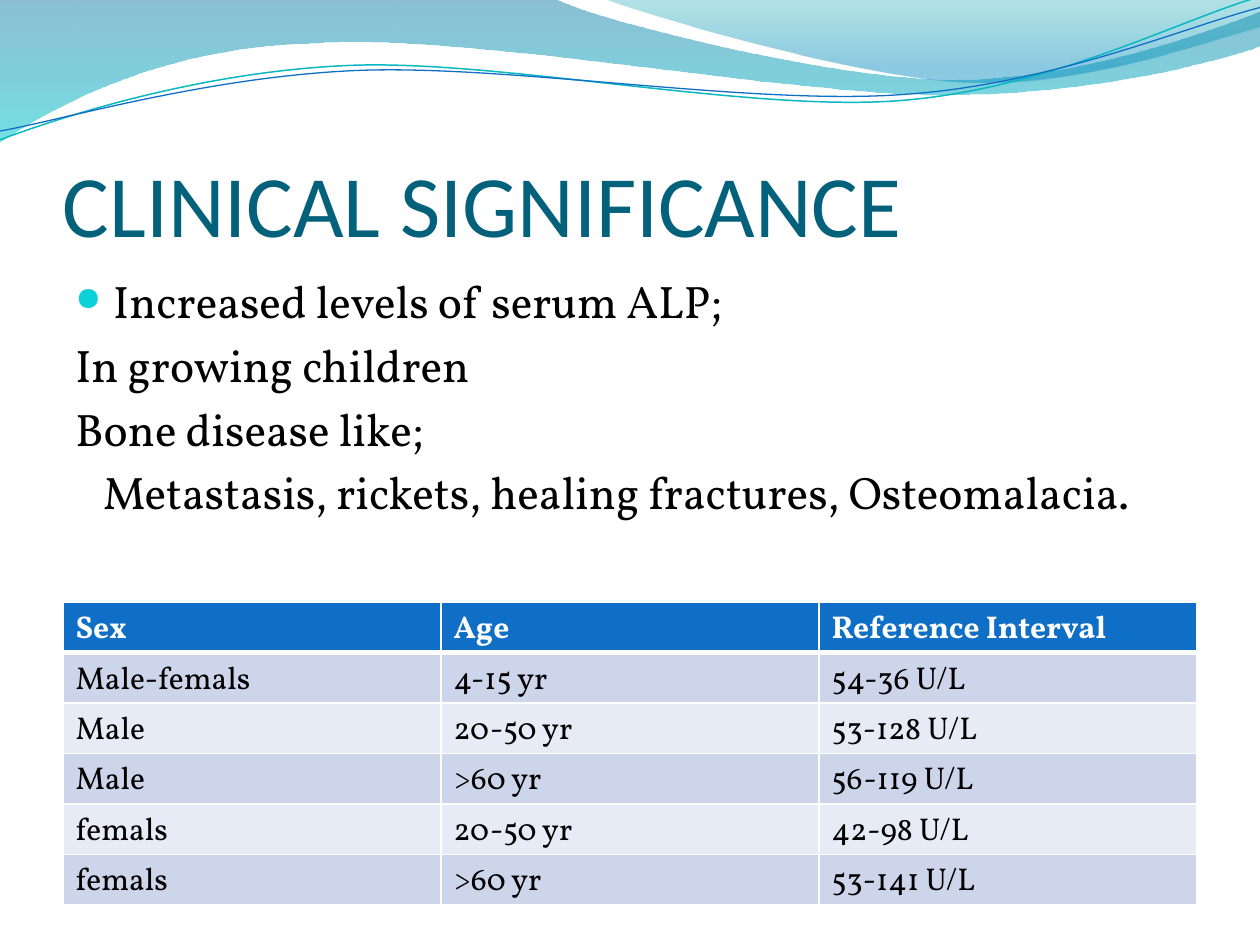
from lxml import etree
from pptx import Presentation
from pptx.dml.color import RGBColor
from pptx.enum.text import MSO_ANCHOR
from pptx.oxml import parse_xml
from pptx.oxml.ns import nsdecls, qn
from pptx.util import Inches, Pt

ANCHOR_BOTTOM = MSO_ANCHOR.BOTTOM
ANCHOR_TOP = MSO_ANCHOR.TOP
TITLE_FONT, BODY_FONT = "Calibri", "Vollkorn"

BLACK = RGBColor(0x00, 0x00, 0x00)
WHITE = RGBColor(0xFF, 0xFF, 0xFF)
TITLE_BLUE = RGBColor(0x04, 0x61, 0x7B)
BULLET_CYAN = RGBColor(0x0B, 0xD0, 0xD9)
LINE_TEAL = RGBColor(0x0A, 0xB8, 0xBF)
BLUE = RGBColor(0x0F, 0x6F, 0xC6)
BAND_DARK = RGBColor(0xCC, 0xD5, 0xEA)
BAND_LIGHT = RGBColor(0xE7, 0xEB, 0xF5)
WAVE_TOP = RGBColor(0x00, 0x74, 0xA1)
WAVE_BOTTOM = RGBColor(0x00, 0xC6, 0xCF)
CREST_TOP = RGBColor(0x00, 0xA1, 0xA9)
CREST_BOTTOM = RGBColor(0x00, 0x8B, 0xBF)

# Each segment is one end point (straight) or two controls and an end point (curve)
WAVE = [(0, 0), (4.4, -0.01), (4.76, 0.17, 6.64, 0.63, 7.58, 0.63),
        (8.53, 0.63, 9.58, 0.26, 10, 0.09), (10.01, 0.36),
        (9.83, 0.44, 8.7, 0.76, 7.46, 0.75), (6.22, 0.75, 3.82, 0.28, 2.57, 0.34),
        (1.29, 0.36, 0.46, 0.83, -0.01, 1.13)]
CREST = [(4.79, -0.01), (5.09, 0.11, 6.82, 0.62, 7.69, 0.65),
         (8.56, 0.69, 9.61, 0.32, 10, 0.21), (10, 0)]
TEAL_CURVE = [(0, 1.11), (0.48, 0.93, 1.58, 0.57, 2.77, 0.52),
              (3.95, 0.47, 5.93, 0.89, 7.13, 0.8), (8.33, 0.71, 9.38, 0.15, 9.98, -0.02)]
BLUE_CURVE = [(0, 1.04), (0.47, 0.96, 1.64, 0.61, 2.83, 0.56),
              (4.03, 0.51, 5.97, 0.84, 7.17, 0.75), (8.36, 0.67, 9.41, 0.21, 10, 0.06)]

# Text, left margin and first-line indent in inches, bullet
BODY_LINES = [
    ("Increased levels of serum ALP;", 0.3, -0.3, True),
    ("In growing children", 0.3, -0.3, False),
    ("Bone disease like;", 0.3, -0.3, False),
    ("Metastasis, rickets, healing fractures, Osteomalacia.", 0.3, -0.08, False),
]
TABLE_ROWS = [
    ("Sex", "Age", "Reference Interval"),
    ("Male-femals", "4-15 yr", "54-36 U/L"),
    ("Male", "20-50 yr", "53-128 U/L"),
    ("Male", ">60 yr", "56-119 U/L"),
    ("femals", "20-50 yr", "42-98 U/L"),
    ("femals", ">60 yr", "53-141 U/L"),
]


def add_outline(slide, segments, close):
    """Build the outline through the end points, then bend its curved segments."""
    ends = [(Inches(segment[-2]), Inches(segment[-1])) for segment in segments]
    builder = slide.shapes.build_freeform(*ends[0])
    builder.add_line_segments(ends[1:], close=close)
    shape = builder.convert_to_shape()
    shape.shadow.inherit = False
    lines = list(shape._element.iter(qn("a:lnTo")))
    for line, segment in zip(lines, segments[1:]):
        if len(segment) == 2:
            continue
        line.tag = qn("a:cubicBezTo")
        for index in (0, 1):
            x, y = segment[2 * index:2 * index + 2]
            point = etree.Element(qn("a:pt"), x=str(Inches(x) - shape.left),
                                  y=str(Inches(y) - shape.top))
            line.insert(index, point)
    return shape


def add_wave(slide, segments, stops):
    """Add a closed shape with a vertical gradient of (position, colour, opacity)."""
    shape = add_outline(slide, segments, True)
    shape.line.fill.background()
    stop_xml = "".join(
        f'<a:gs pos="{position * 1000}"><a:srgbClr val="{color}">'
        f'<a:alpha val="{opacity * 1000}"/></a:srgbClr></a:gs>'
        for position, color, opacity in stops)
    gradient = parse_xml(f'<a:gradFill {nsdecls("a")} rotWithShape="1"><a:gsLst>{stop_xml}'
                         '</a:gsLst><a:lin ang="5400000" scaled="0"/></a:gradFill>')
    shape._element.spPr.find(qn("a:custGeom")).addnext(gradient)


def add_curve(slide, segments, color, width):
    shape = add_outline(slide, segments, False)
    shape.fill.background()
    shape.line.color.rgb = color
    shape.line.width = Pt(width)


def add_run(paragraph, text, font, size, color, bold=False):
    run = paragraph.add_run()
    run.text = text
    run.font.name = font
    run.font.size = Pt(size)
    run.font.bold = bold
    run.font.color.rgb = color


def add_text_frame(slide, left, top, width, height, anchor):
    box = slide.shapes.add_textbox(Inches(left), Inches(top), Inches(width), Inches(height))
    frame = box.text_frame
    frame.word_wrap = True
    frame.vertical_anchor = anchor
    return frame


def add_title(slide, text):
    frame = add_text_frame(slide, 0.5, 0.77, 9, 1.25, ANCHOR_BOTTOM)
    frame.margin_left = frame.margin_right = frame.margin_bottom = 0
    add_run(frame.paragraphs[0], text, TITLE_FONT, 50, TITLE_BLUE)


def add_body(slide, lines):
    frame = add_text_frame(slide, 0.5, 2.12, 9, 4.8, ANCHOR_TOP)
    for index, (text, margin, indent, bullet) in enumerate(lines):
        paragraph = frame.add_paragraph() if index else frame.paragraphs[0]
        paragraph.space_before = Pt(5.2 if index else 0)
        properties = paragraph._p.get_or_add_pPr()
        properties.set("marL", str(Inches(margin)))
        properties.set("indent", str(Inches(indent)))
        if bullet:
            color = etree.SubElement(properties, qn("a:buClr"))
            etree.SubElement(color, qn("a:srgbClr"), val=str(BULLET_CYAN))
            etree.SubElement(properties, qn("a:buSzPct"), val="72000")
            etree.SubElement(properties, qn("a:buChar"), char="●")
        add_run(paragraph, text, BODY_FONT, 26, BLACK)


def set_borders(cell, bottom_width, top_width):
    properties = cell._tc.get_or_add_tcPr()
    widths = {"lnL": 1, "lnR": 1, "lnT": top_width, "lnB": bottom_width}
    for index, (side, width) in enumerate(widths.items()):
        border = parse_xml(f'<a:{side} {nsdecls("a")} w="{Pt(width)}"><a:solidFill>'
                           f'<a:srgbClr val="{WHITE}"/></a:solidFill></a:{side}>')
        properties.insert(index, border)


def add_reference_table(slide, rows):
    row_height = 0.39  # rows grow to fit their text
    frame = slide.shapes.add_table(len(rows), len(rows[0]), Inches(0.5), Inches(4.78),
                                   Inches(9), Inches(row_height * len(rows)))
    for row_index, row in enumerate(rows):
        header = row_index == 0
        band = BAND_DARK if row_index % 2 else BAND_LIGHT
        for column_index, text in enumerate(row):
            cell = frame.table.cell(row_index, column_index)
            cell.fill.solid()
            cell.fill.fore_color.rgb = BLUE if header else band
            set_borders(cell, 3 if header else 1, 3 if row_index == 1 else 1)
            add_run(cell.text_frame.paragraphs[0], text, BODY_FONT, 18,
                    WHITE if header else BLACK, header)


def main():
    presentation = Presentation()
    presentation.slide_width = Inches(10)
    presentation.slide_height = Inches(7.5)
    slide = presentation.slides.add_slide(presentation.slide_layouts[6])

    # Wave decoration along the top
    add_wave(slide, WAVE, [(0, WAVE_TOP, 45), (100, WAVE_BOTTOM, 55)])
    add_wave(slide, CREST, [(0, CREST_TOP, 30), (80, CREST_BOTTOM, 45)])
    add_curve(slide, TEAL_CURVE, LINE_TEAL, 0.85)
    add_curve(slide, BLUE_CURVE, BLUE, 0.75)

    # Content
    add_title(slide, "CLINICAL SIGNIFICANCE")
    add_body(slide, BODY_LINES)
    add_reference_table(slide, TABLE_ROWS)

    presentation.save("out.pptx")


if __name__ == "__main__":
    main()
